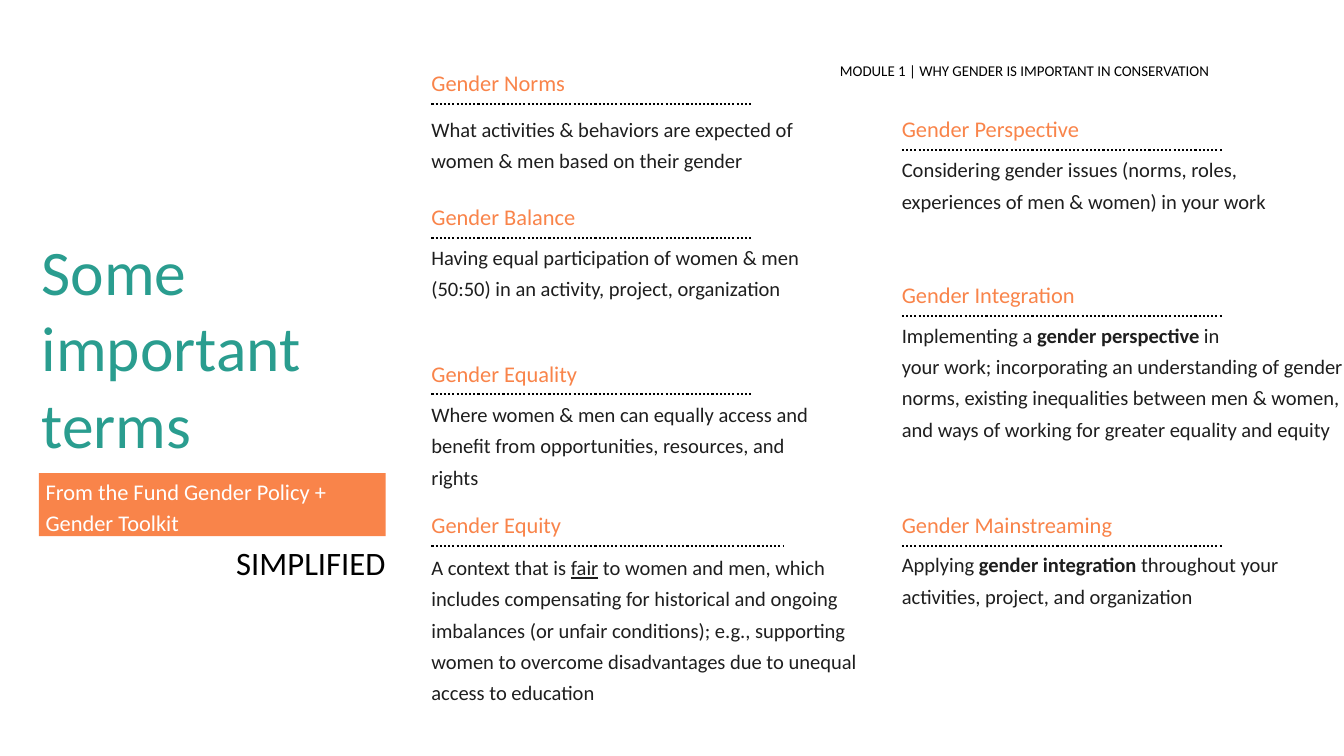
from dataclasses import dataclass

from lxml.etree import SubElement
from pptx import Presentation
from pptx.dml.color import RGBColor
from pptx.enum.dml import MSO_LINE
from pptx.enum.shapes import MSO_CONNECTOR, MSO_SHAPE
from pptx.enum.text import MSO_ANCHOR, MSO_AUTO_SIZE, PP_ALIGN
from pptx.oxml.ns import qn
from pptx.util import Pt


@dataclass(frozen=True)
class Theme:
    font: str = "Calibri"
    teal: str = "2A9D8F"
    orange: str = "F9844A"
    ink: str = "1E1E1E"
    black: str = "000000"
    white: str = "FFFFFF"
    title: int = 68
    label: int = 35
    heading: int = 24
    body: int = 22
    header: int = 16


theme = Theme()


def write(sp, paragraphs, size, color, spacing=33.6, inset=0, align=PP_ALIGN.LEFT):
    tf = sp.text_frame
    tf.word_wrap = True
    tf.auto_size = MSO_AUTO_SIZE.SHAPE_TO_FIT_TEXT
    tf.vertical_anchor = MSO_ANCHOR.TOP
    tf.margin_left = Pt(inset)
    tf.margin_top = tf.margin_right = tf.margin_bottom = 0
    for i, runs in enumerate(paragraphs):
        p = tf.add_paragraph() if i else tf.paragraphs[0]
        p.alignment = align
        p.line_spacing = Pt(spacing)
        p.font.name = theme.font
        p.font.size = Pt(size)
        p.font.color.rgb = RGBColor.from_string(color)
        for text, style in runs:
            r = p.add_run()
            r.text = text
            if style:
                setattr(r.font, style, True)


def plain(text):
    return [[(text, None)]]


prs = Presentation()
prs.slide_width, prs.slide_height = Pt(1440), Pt(810)
s = prs.slides.add_slide(prs.slide_layouts[5])

title = s.shapes.title
title.left, title.top, title.width, title.height = Pt(44.64), Pt(249), Pt(325), Pt(248)
write(title, plain("Some important terms"), theme.title, theme.teal, 81.6)

header = s.shapes.add_textbox(Pt(900), Pt(62.64), Pt(518), Pt(22))
write(header, plain("MODULE 1 | WHY GENDER IS IMPORTANT IN CONSERVATION"),
      theme.header, theme.black, 22.4)

banner = s.shapes.add_shape(MSO_SHAPE.RECTANGLE, Pt(41.75), Pt(507), Pt(371.5), Pt(67.5))
banner.shadow.inherit = False
banner.fill.solid()
banner.fill.fore_color.rgb = RGBColor.from_string(theme.orange)
banner.line.fill.background()
write(banner, plain("From the Fund Gender Policy + Gender Toolkit"),
      theme.heading, theme.white, inset=7.2)

label = s.shapes.add_textbox(Pt(41.75), Pt(590.4), Pt(371.5), Pt(36))
write(label, plain("SIMPLIFIED"), theme.label, theme.black, inset=7.2, align=PP_ALIGN.RIGHT)

LEFT, RIGHT = 462.25, 966.25
HEADING_RISE = 41.9
RULE = 344

terms = [
    (LEFT, 111.6, RULE, 6.5, 450, "Gender Norms",
     plain("What activities & behaviors are expected of women & men based on their gender")),
    (LEFT, 254.9, RULE, 0, 426, "Gender Balance",
     plain("Having equal participation of women & men (50:50) in an activity, project, organization")),
    (LEFT, 422.6, RULE, 0.7, 426, "Gender Equality",
     plain("Where women & men can equally access and benefit from opportunities, resources, and rights")),
    (LEFT, 584.6, 378, 2.9, 468, "Gender Equity",
     [[("A context that is ", None), ("fair", "underline"),
       (" to women and men, which includes compensating for historical and ongoing imbalances "
        "(or unfair conditions); e.g., supporting women to overcome disadvantages due to "
        "unequal access to education", None)]]),
    (RIGHT, 160.6, RULE, 0.7, 426, "Gender Perspective",
     plain("Considering gender issues (norms, roles, experiences of men & women) in your work")),
    (RIGHT, 338.4, RULE, 0, 474, "Gender Integration",
     [[("Implementing a ", None), ("gender perspective", "bold"), (" in", None)],
      [("your work; incorporating an understanding of gender norms, existing inequalities "
        "between men & women, and ways of working for greater equality and equity", None)]]),
    (RIGHT, 584.6, RULE, 0, 468, "Gender Mainstreaming",
     [[("Applying ", None), ("gender integration", "bold"),
       (" throughout your activities, project, and organization", None)]]),
]

for x, y, rule, gap, width, heading, definition in terms:
    line = s.shapes.add_connector(MSO_CONNECTOR.STRAIGHT, Pt(x), Pt(y), Pt(x + rule), Pt(y))
    line.line.color.rgb = RGBColor.from_string(theme.black)
    line.line.width = Pt(2.25)
    line.line.dash_style = MSO_LINE.ROUND_DOT
    SubElement(line._element.spPr, qn("a:effectLst"))

    sp = s.shapes.add_textbox(Pt(x), Pt(y - HEADING_RISE), Pt(310), Pt(33.6))
    write(sp, plain(heading), theme.heading, theme.orange)

    sp = s.shapes.add_textbox(Pt(x), Pt(y + gap), Pt(width), Pt(67.2))
    write(sp, definition, theme.body, theme.ink)

prs.save("out.pptx")
